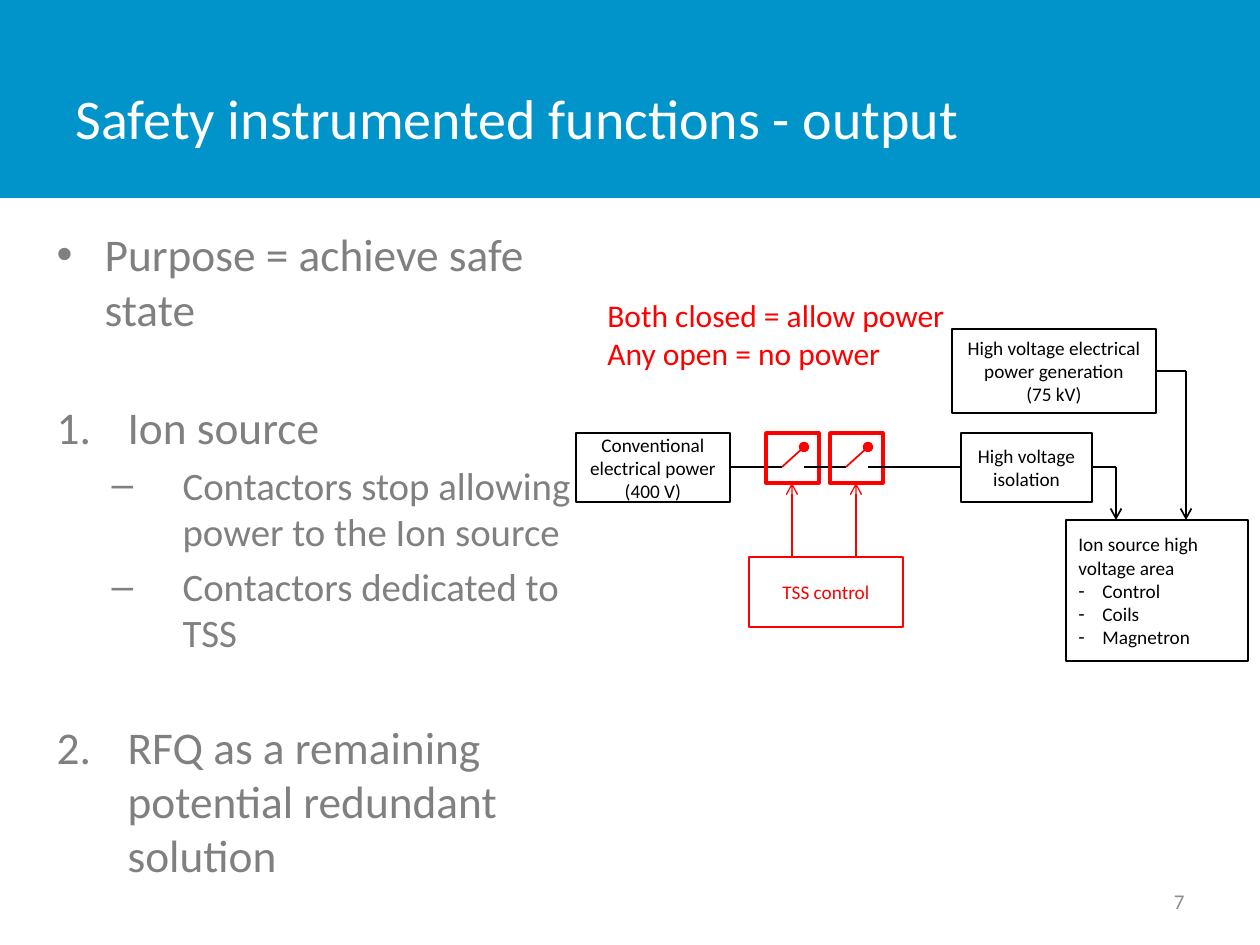
from lxml.etree import SubElement
from pptx import Presentation
from pptx.dml.color import RGBColor
from pptx.enum.shapes import MSO_CONNECTOR, MSO_SHAPE
from pptx.enum.text import MSO_ANCHOR, MSO_AUTO_SIZE, PP_ALIGN
from pptx.oxml.ns import qn
from pptx.util import Emu, Pt

BLUE, WHITE, BLACK, RED = "0094CA", "FFFFFF", "000000", "FF0000"
BODY_GREY, NUMBER_GREY = "808080", "8C8C8C"


def px(length):
    return Emu(round(length * 914400 / 126))


def color(hex_string):
    return RGBColor.from_string(hex_string)


class SlideBuilder:
    font_name = "Calibri"

    def __init__(self, slide):
        self.slide = slide
        self.shapes = slide.shapes

    def place(self, shape, at):
        shape.left, shape.top, shape.width, shape.height = map(px, at)

    def bullet(self, paragraph, mark, margin, hanging):
        """A mark that is a number makes a numbered item starting there."""
        props = paragraph._p.get_or_add_pPr()
        props.set("marL", str(px(margin)))
        props.set("indent", str(-px(hanging)))
        if isinstance(mark, int):
            bullet_parts = [SubElement(props, qn("a:buAutoNum"),
                                       type="arabicPeriod", startAt=str(mark))]
        else:
            bullet_parts = [SubElement(props, qn("a:buFont"), typeface="Arial"),
                            SubElement(props, qn("a:buChar"), char=mark)]
        # Bullets come before the default run properties
        defaults = props.find(qn("a:defRPr"))
        if defaults is not None:
            for part in bullet_parts:
                defaults.addprevious(part)

    def style(self, paragraph, size, ink, align=PP_ALIGN.LEFT):
        paragraph.alignment = align
        font = paragraph.font
        font.name, font.size, font.color.rgb = self.font_name, Pt(size), color(ink)

    def fill_text(self, frame, lines, size, ink, align=PP_ALIGN.LEFT):
        frame.text = "\n".join(lines)
        for paragraph in frame.paragraphs:
            self.style(paragraph, size, ink, align)

    def title(self, text, at):
        title = self.shapes.title
        self.place(title, at)
        title.text_frame.vertical_anchor = MSO_ANCHOR.MIDDLE
        self.fill_text(title.text_frame, [text], 32, WHITE)

    def body(self, items, at):
        body = self.slide.placeholders[1]
        self.place(body, at)
        frame = body.text_frame
        frame.auto_size = MSO_AUTO_SIZE.NONE
        for index, (text, level, mark, margin, hanging, gap) in enumerate(items):
            paragraph = frame.paragraphs[0] if index == 0 else frame.add_paragraph()
            paragraph.text, paragraph.level = text, level
            paragraph.space_before = Pt(gap)
            self.bullet(paragraph, mark, margin, hanging)
            self.style(paragraph, 22.2 if level else 25.9, BODY_GREY)

    def band(self, at, fill):
        band = self.shapes.add_shape(MSO_SHAPE.RECTANGLE, *map(px, at))
        band.shadow.inherit = False
        band.fill.solid()
        band.fill.fore_color.rgb = color(fill)
        band.line.fill.background()
        # Behind the placeholders
        band.element.getparent().insert(2, band.element)

    def box(self, at, lines=(), ink=BLACK, width=1, align=PP_ALIGN.CENTER):
        box = self.shapes.add_shape(MSO_SHAPE.RECTANGLE, *map(px, at))
        box.shadow.inherit = False
        box.fill.background()
        box.line.color.rgb, box.line.width = color(ink), Pt(width)
        if lines:
            box.text_frame.vertical_anchor = MSO_ANCHOR.MIDDLE
            self.fill_text(box.text_frame, lines, 11, ink, align)
        return box

    def text(self, lines, at, size, ink, align=PP_ALIGN.LEFT, wrap=True,
             anchor=MSO_ANCHOR.TOP):
        frame = self.shapes.add_textbox(*map(px, at)).text_frame
        frame.word_wrap, frame.vertical_anchor = wrap, anchor
        self.fill_text(frame, lines, size, ink, align)

    def line(self, start, end, ink=BLACK, width=1, tip=None):
        line = self.shapes.add_connector(MSO_CONNECTOR.STRAIGHT, *map(px, start + end))
        line.line.color.rgb, line.line.width = color(ink), Pt(width)
        if tip:
            SubElement(line.element.spPr.find(qn("a:ln")), qn("a:tailEnd"), type=tip)
        SubElement(line.element.spPr, qn("a:effectLst"))

    def elbow(self, start, end):
        corner = (end[0], start[1])
        self.line(start, corner)
        self.line(corner, end, tip="arrow")


def main():
    deck = Presentation()
    deck.slide_width, deck.slide_height = px(1260), px(945)
    page = SlideBuilder(deck.slides.add_slide(deck.slide_layouts[1]))

    # Heading and list
    page.band((0, 0, 1260, 198), BLUE)
    page.title("Safety instrumented functions - output", (63, 38, 984, 158))
    page.body([
        ("Purpose = achieve safe state", 0, "•", 48, 48, 5),
        ("Ion source", 0, 1, 71, 71, 36.5),
        ("Contactors stop allowing power to the Ion source", 1, "–", 126, 71, 4.5),
        ("Contactors dedicated to TSS", 1, "–", 126, 71, 4.5),
        ("RFQ as a remaining potential redundant solution", 0, 2, 71, 71, 36),
    ], (44, 220, 546, 688))
    page.text(["7"], (903, 876, 294, 50), 12, NUMBER_GREY, PP_ALIGN.RIGHT,
              anchor=MSO_ANCHOR.MIDDLE)

    # Power supply boxes
    page.box((576, 433, 154, 69), ["Conventional electrical power (400 V)"])
    page.box((961, 433, 131, 69), ["High voltage isolation"])
    page.box((952, 329, 204, 84),
             ["High voltage electrical power generation", "(75 kV)"])
    ion_source = page.box(
        (1066, 520, 182, 141),
        ["Ion source high voltage area", "Control", "Coils", "Magnetron"],
        align=PP_ALIGN.LEFT)
    for part in ion_source.text_frame.paragraphs[1:]:
        page.bullet(part, "-", 24, 24)

    # Feeds into the ion source
    wire_y = 467
    page.elbow((1092, wire_y), (1116, 520))
    page.elbow((1156, 371), (1186, 520))

    # Contactors in series, each driven by the TSS control
    wire_start = 730
    for left in (766, 830):
        hinge, contact, middle = left + 16, left + 38, left + 26
        page.line((wire_start, wire_y), (hinge, wire_y))
        page.line((hinge, wire_y), (contact, 447), RED, tip="oval")
        page.box((left, 433, 53, 50), ink=RED, width=2)
        page.line((middle, 557), (middle, 483), RED, 0.75, "arrow")
        wire_start = contact
    page.line((wire_start, wire_y), (961, wire_y))
    page.box((749, 557, 154, 70), ["TSS control"], RED)
    page.text(["Both closed = allow power", "Any open = no power"],
              (595, 290, 367, 89), 18, RED, wrap=False)

    deck.save("out.pptx")


if __name__ == "__main__":
    main()
